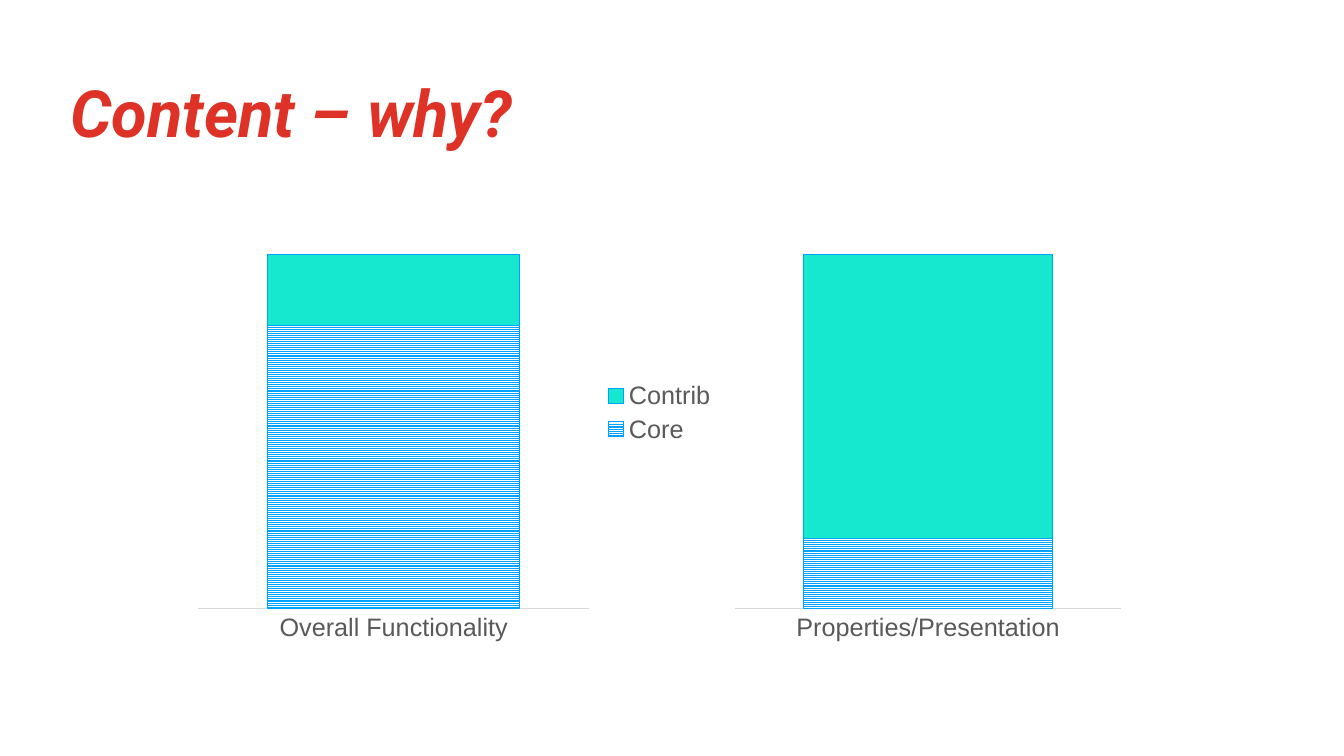
from dataclasses import dataclass

from lxml import etree
from pptx import Presentation
from pptx.chart.data import CategoryChartData
from pptx.dml.color import RGBColor
from pptx.enum.chart import XL_CHART_TYPE, XL_LEGEND_POSITION, XL_TICK_MARK
from pptx.enum.dml import MSO_PATTERN
from pptx.enum.text import MSO_ANCHOR, MSO_AUTO_SIZE, PP_ALIGN
from pptx.oxml.ns import qn
from pptx.util import Inches, Pt


@dataclass(frozen=True)
class Theme:
    paper: RGBColor = RGBColor.from_string("FFFFFF")
    heading: RGBColor = RGBColor.from_string("DE3226")
    label: RGBColor = RGBColor.from_string("595959")
    axis: RGBColor = RGBColor.from_string("D9D9D9")
    core: RGBColor = RGBColor.from_string("00A2FF")
    contrib: RGBColor = RGBColor.from_string("16E7CF")
    heading_font: str = "Roboto"
    chart_font: str = "Arial"
    heading_size: float = 46.5
    label_size: float = 18
    line_width: float = 0.75


@dataclass(frozen=True)
class Box:
    left: float
    top: float
    width: float
    height: float

    def emu(self):
        return [Inches(side) for side in (self.left, self.top, self.width, self.height)]


THEME = Theme()
SLIDE_WIDTH, SLIDE_HEIGHT = 13.33, 7.5
HEADING_BOX = Box(0.64, 0.8, 12.29, 0.75)
CHARTS_BOX = Box(1.86, 1.72, 9.34, 4.75)
OVERALL_WIDTH = 5.35
AXIS_MAXIMUM = 125


def add_heading(slide, box, text):
    heading = slide.shapes.title
    heading.left, heading.top, heading.width, heading.height = box.emu()
    frame = heading.text_frame
    frame.word_wrap = True
    frame.auto_size = MSO_AUTO_SIZE.SHAPE_TO_FIT_TEXT
    frame.vertical_anchor = MSO_ANCHOR.MIDDLE
    frame.margin_left = frame.margin_right = Inches(0.06)
    frame.margin_top = frame.margin_bottom = Inches(0.06)
    line = frame.paragraphs[0]
    line.alignment = PP_ALIGN.LEFT
    line.line_spacing = 0.8
    run = line.add_run()
    run.text = text
    run.font.name = THEME.heading_font
    run.font.size = Pt(THEME.heading_size)
    run.font.bold = run.font.italic = True
    run.font.color.rgb = THEME.heading


def style_labels(font):
    font.name = THEME.chart_font
    font.size = Pt(THEME.label_size)
    font.color.rgb = THEME.label


def place_plot(chart, plot_width):
    """Fix the inner plot area, in shares of the chart's size."""
    plot_area = chart._chartSpace.chart.plotArea
    for old_layout in plot_area.findall(qn("c:layout")):
        plot_area.remove(old_layout)
    layout = etree.Element(qn("c:layout"))
    manual = etree.SubElement(layout, qn("c:manualLayout"))
    settings = {
        "layoutTarget": "inner", "xMode": "edge", "yMode": "edge",
        "x": 0.02, "y": 0.17, "w": plot_width, "h": 0.74,
    }
    for tag, value in settings.items():
        etree.SubElement(manual, qn(f"c:{tag}")).set("val", str(value))
    plot_area.insert(0, layout)


def style_series(core, contrib):
    core_fill = core.format.fill
    core_fill.patterned()
    core_fill.pattern = MSO_PATTERN.LIGHT_HORIZONTAL
    core_fill.fore_color.rgb = THEME.core
    core_fill.back_color.rgb = THEME.paper
    contrib.format.fill.solid()
    contrib.format.fill.fore_color.rgb = THEME.contrib
    for series in (core, contrib):
        series.format.line.color.rgb = THEME.core
        series.format.line.width = Pt(THEME.line_width)


def style_axes(chart):
    category = chart.category_axis
    category.major_tick_mark = category.minor_tick_mark = XL_TICK_MARK.NONE
    category.format.line.color.rgb = THEME.axis
    category.format.line.width = Pt(THEME.line_width)
    style_labels(category.tick_labels.font)
    share = chart.value_axis
    share.minimum_scale, share.maximum_scale = 0, AXIS_MAXIMUM
    share.has_major_gridlines = False
    share.tick_labels.number_format = "0%"
    share.tick_labels.number_format_is_linked = False
    share.visible = False


def add_split_chart(slide, box, category, split, plot_width, with_legend=False):
    """Draw one stacked column; split maps series names to core and contrib values."""
    data = CategoryChartData()
    data.categories = [category]
    for name, value in split.items():
        data.add_series(name, [value])
    chart = slide.shapes.add_chart(XL_CHART_TYPE.COLUMN_STACKED, *box.emu(), data).chart
    chart.has_title = False
    style_labels(chart.font)
    chart.has_legend = with_legend
    if with_legend:
        chart.legend.position = XL_LEGEND_POSITION.RIGHT
        chart.legend.include_in_layout = False
        style_labels(chart.legend.font)
    columns = chart.plots[0]
    columns.gap_width, columns.overlap = 55, 100
    columns.vary_by_categories = False
    style_series(*columns.series)
    style_axes(chart)
    place_plot(chart, plot_width)


def add_comparison(slide, box):
    overall = Box(box.left, box.top, OVERALL_WIDTH, box.height)
    properties = Box(box.left + OVERALL_WIDTH, box.top, box.width - OVERALL_WIDTH, box.height)
    add_split_chart(slide, overall, "Overall Functionality",
                    {"Core": 100, "Contrib": 25}, 0.725, with_legend=True)
    add_split_chart(slide, properties, "Properties/Presentation",
                    {"Series 1": 25, "Series 2": 100}, 0.96)


def main():
    deck = Presentation()
    deck.slide_width, deck.slide_height = Inches(SLIDE_WIDTH), Inches(SLIDE_HEIGHT)
    title_only = deck.slide_layouts.get_by_name("Title Only")
    slide = deck.slides.add_slide(title_only)
    slide.background.fill.solid()
    slide.background.fill.fore_color.rgb = THEME.paper
    add_heading(slide, HEADING_BOX, "Content – why?")
    add_comparison(slide, CHARTS_BOX)
    deck.save("out.pptx")


if __name__ == "__main__":
    main()
